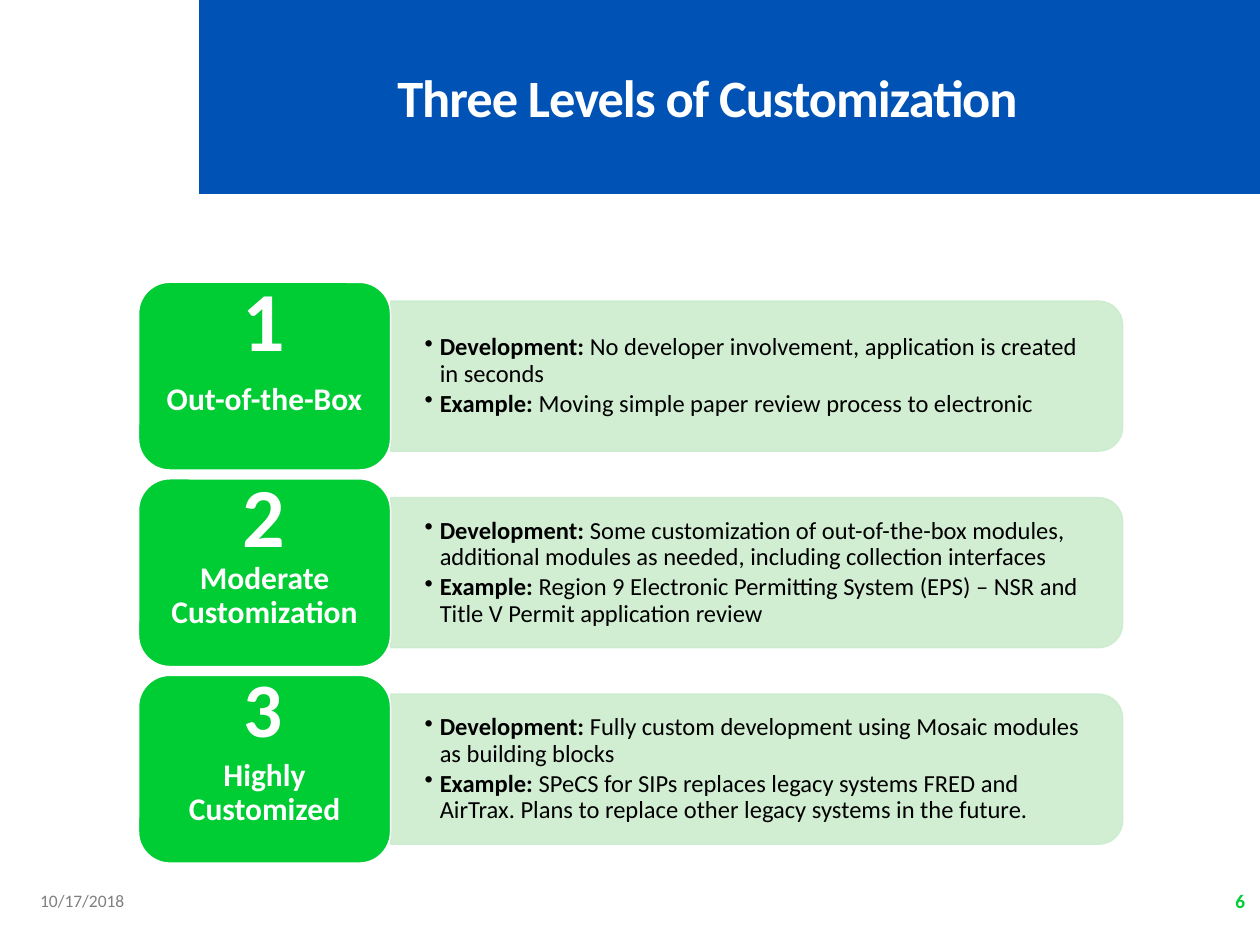
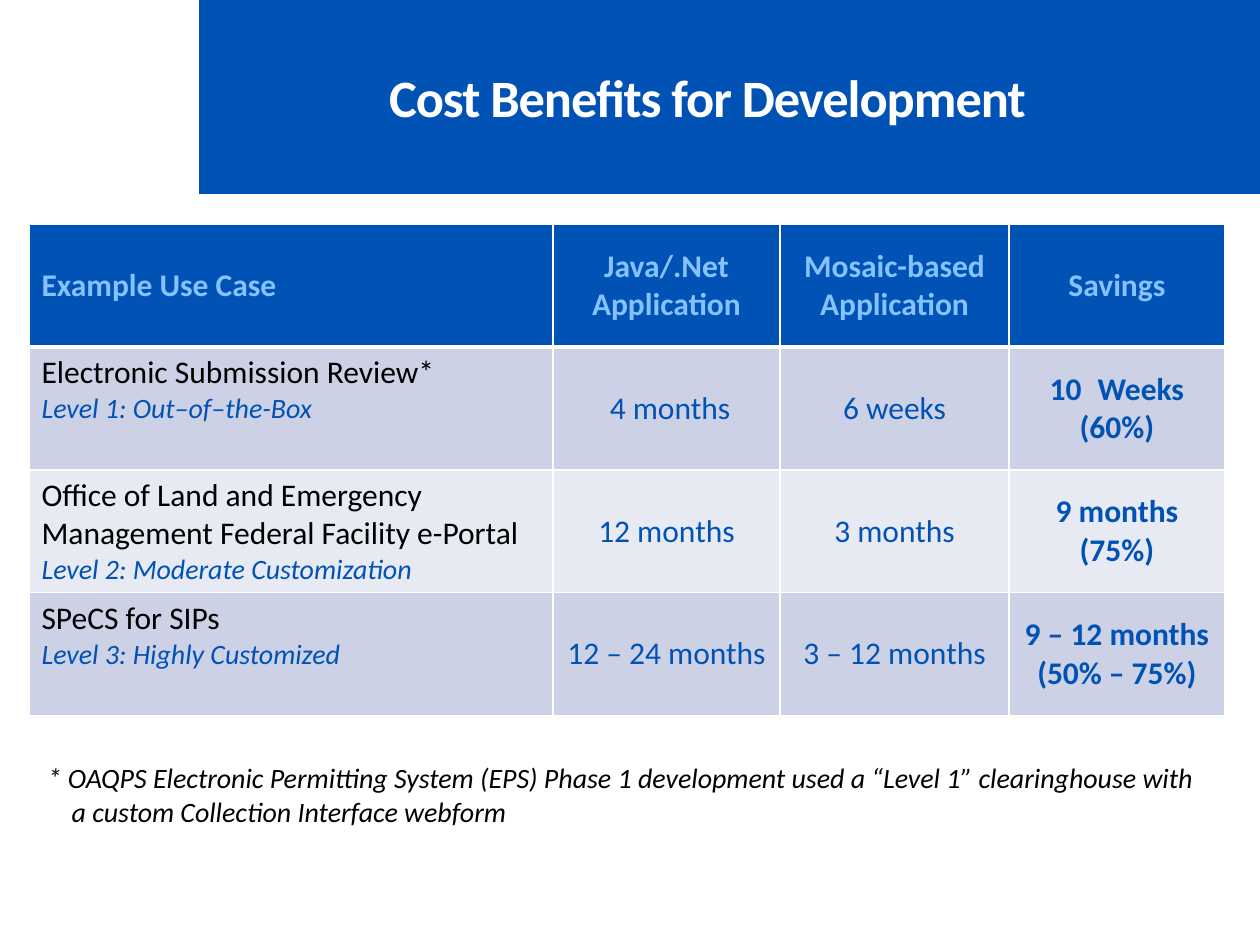
from dataclasses import dataclass
from math import cos, pi, sin
from typing import Any, NamedTuple

from lxml.etree import SubElement
from pptx import Presentation
from pptx.dml.color import RGBColor
from pptx.enum.shapes import MSO_SHAPE as SHAPE
from pptx.enum.text import MSO_ANCHOR as ANCHOR, PP_ALIGN as ALIGN
from pptx.oxml.ns import qn
from pptx.util import Pt

PX = 9144
FONT = "Calibri"
BLUE = RGBColor(0x00, 0x52, 0xB5)
GREEN = RGBColor(0x00, 0xCC, 0x33)
MINT = RGBColor(0xCC, 0xEC, 0xCE)
SKY = RGBColor(0x85, 0xC2, 0xFF)
BAND_DARK = RGBColor(0xCC, 0xD1, 0xE5)
BAND_LIGHT = RGBColor(0xE7, 0xE9, 0xF3)
GRAY = RGBColor(0x80, 0x80, 0x80)
BLACK = RGBColor(0, 0, 0)
WHITE = RGBColor(0xFF, 0xFF, 0xFF)

TITLE = {"size": Pt(30), "bold": True, "color": WHITE}
BADGE = {"size": Pt(18), "bold": True, "color": WHITE}
DATE = {"size": Pt(10), "color": GRAY}
PAGE = {"size": Pt(11), "bold": True, "color": GREEN}
DETAIL = {"size": Pt(14), "bold": False, "color": BLACK}
DETAIL_LABEL = {**DETAIL, "bold": True}
HEADER = {"size": Pt(18), "bold": True, "color": SKY}
USE_CASE = {"size": Pt(18), "bold": False, "color": BLACK}
LEVEL_NOTE = {"size": Pt(16), "bold": False, "italic": True, "color": BLUE}
DURATION = {"size": Pt(18), "bold": False, "color": BLUE}
SAVING = {"size": Pt(18), "bold": True, "color": BLUE}
FOOTNOTE = {"size": Pt(16), "italic": True, "color": BLACK}


class Box(NamedTuple):
    left: int
    top: int
    width: int
    height: int

    def emu(self) -> list[int]:
        return [v * PX for v in self]


@dataclass
class Level:
    number: str
    number_size: int
    name: str
    development: str
    example: str


@dataclass
class UseCase:
    name: str
    level: str
    java: str
    mosaic: str
    saving: str
    share: str
    saving_number: int = 0


LEVELS = [
    Level("1", 48, "Out-of-the-Box",
          "No developer involvement, application is created in seconds",
          "Moving simple paper review process to electronic"),
    Level("2", 48, "Moderate Customization",
          "Some customization of out-of-the-box modules, additional modules as needed, "
          "including collection interfaces",
          "Region 9 Electronic Permitting System (EPS) – NSR and Title V Permit application review"),
    Level("3", 44, "Highly Customized",
          "Fully custom development using Mosaic modules as building blocks",
          "SPeCS for SIPs replaces legacy systems FRED and AirTrax. "
          "Plans to replace other legacy systems in the future."),
]
HEADERS = [["Example Use Case"], ["Java/.Net", "Application"], ["Mosaic-based Application"], ["Savings"]]
USE_CASES = [
    UseCase("Electronic Submission Review*", "Level 1: Out–of–the-Box",
            " 4 months", "6 weeks", "Weeks", "(60%)", 10),
    UseCase("Office of Land and Emergency Management Federal Facility e-Portal",
            "Level 2: Moderate Customization", "12 months", "3 months", "9 months", "(75%)"),
    UseCase("SPeCS for SIPs", "Level 3: Highly Customized",
            "12 – 24 months", "3 – 12 months", "9 – 12 months", "(50% – 75%)"),
]
LEVEL_PITCH = 156
COLUMN_WIDTHS = [416, 180, 182, 171]


def add_run(p: Any, text: str, fmt: dict[str, Any]) -> Any:
    r = p.add_run()
    r.text = text
    r.font.name = FONT
    for key, value in fmt.items():
        if key == "color":
            r.font.color.rgb = value
        else:
            setattr(r.font, key, value)
    return r


def next_paragraph(tf: Any, align: Any = ALIGN.LEFT) -> Any:
    p = tf.paragraphs[0] if not tf.paragraphs[0].runs else tf.add_paragraph()
    p.alignment = align
    return p


def hang(p: Any, margin: int, indent: int) -> Any:
    pPr = p._p.get_or_add_pPr()
    pPr.set("marL", str(margin * PX))
    pPr.set("indent", str(-indent * PX))
    return pPr


def set_insets(tf: Any, left: int, top: int, right: int, bottom: int) -> None:
    insets = {"left": left, "top": top, "right": right, "bottom": bottom}
    for side, value in insets.items():
        setattr(tf, f"margin_{side}", value * PX)


def add_text(s: Any, box: Box, text: str, fmt: dict[str, Any], align: Any = ALIGN.LEFT,
             anchor: Any = ANCHOR.TOP, wrap: bool = True) -> Any:
    tf = s.shapes.add_textbox(*box.emu()).text_frame
    tf.word_wrap = wrap
    tf.vertical_anchor = anchor
    p = next_paragraph(tf, align)
    add_run(p, text, fmt)
    return p


def paint(sp: Any, fill: RGBColor, line: RGBColor | None = None) -> None:
    sp.shadow.inherit = False
    sp.fill.solid()
    sp.fill.fore_color.rgb = fill
    if line is None:
        sp.line.fill.background()
    else:
        sp.line.color.rgb = line
        sp.line.width = Pt(0.85)


def add_titled_slide(prs: Any, title: str) -> Any:
    s = prs.slides.add_slide(prs.slide_layouts[6])
    paint(s.shapes.add_shape(SHAPE.RECTANGLE, *Box(158, 0, 842, 154).emu()), BLUE)
    p = add_text(s, Box(171, 25, 781, 109), title, TITLE, ALIGN.CENTER, ANCHOR.MIDDLE)
    p.line_spacing = 0.9
    p.runs[0]._r.get_or_add_rPr().set("spc", "-60")
    return s


def add_panel(s: Any, box: Box, radius: int, steps: int = 8) -> Any:
    left, top, right, bottom = box.left, box.top, box.left + box.width, box.top + box.height
    outline = [(left, top)]
    for center_y, start in ((top + radius, -pi / 2), (bottom - radius, 0)):
        for i in range(steps + 1):
            angle = start + i * pi / 2 / steps
            outline.append((right - radius + radius * cos(angle), center_y + radius * sin(angle)))
    outline.append((left, bottom))
    points = [(round(x * PX), round(y * PX)) for x, y in outline]
    fb = s.shapes.build_freeform(*points[0])
    fb.add_line_segments(points[1:], close=True)
    sp = fb.convert_to_shape()
    paint(sp, MINT, MINT)
    for color in sp._element.spPr.iter(qn("a:srgbClr")):
        SubElement(color, qn("a:alpha")).set("val", "90000")
    return sp


def add_level(s: Any, level: Level, offset: int) -> None:
    tf = add_panel(s, Box(310, 239 + offset, 581, 119), 19).text_frame
    tf.word_wrap = True
    tf.vertical_anchor = ANCHOR.MIDDLE
    set_insets(tf, 27, 19, 33, 19)
    for label, text in (("Development: ", level.development), ("Example: ", level.example)):
        p = next_paragraph(tf)
        p.line_spacing = 0.9
        p.space_after = Pt(2)
        SubElement(hang(p, 12, 12), qn("a:buChar")).set("char", "•")
        add_run(p, label, DETAIL_LABEL)
        add_run(p, text, DETAIL)

    sp = s.shapes.add_shape(SHAPE.ROUNDED_RECTANGLE, *Box(110, 224 + offset, 200, 149).emu())
    paint(sp, GREEN, WHITE)
    tf = sp.text_frame
    tf.word_wrap = True
    tf.vertical_anchor = ANCHOR.MIDDLE
    set_insets(tf, 15, 49, 15, 11)
    p = next_paragraph(tf, ALIGN.CENTER)
    p.line_spacing = 0.9
    add_run(p, level.name, BADGE)

    add_text(s, Box(182, 207 + offset, 54, 91), level.number,
             {**BADGE, "size": Pt(level.number_size)}, ALIGN.CENTER, wrap=False)


def style_cell(cell: Any, fill: RGBColor, anchor: Any, top: int = 1, bottom: int = 1) -> Any:
    tcPr = cell._tc.get_or_add_tcPr()
    for side, width in {"L": 1, "R": 1, "T": top, "B": bottom}.items():
        ln = SubElement(tcPr, qn(f"a:ln{side}"), w=str(Pt(width)))
        SubElement(SubElement(ln, qn("a:solidFill")), qn("a:srgbClr")).set("val", str(WHITE))
    cell.fill.solid()
    cell.fill.fore_color.rgb = fill
    cell.vertical_anchor = anchor
    return cell.text_frame


def add_savings_table(s: Any, box: Box) -> None:
    rows = len(USE_CASES) + 1
    table = s.shapes.add_table(rows, len(HEADERS), *box.emu()).table
    for column, width in zip(table.columns, COLUMN_WIDTHS):
        column.width = width * PX
    for row in table.rows:
        row.height = box.height * PX // rows

    for c, lines in enumerate(HEADERS):
        tf = style_cell(table.cell(0, c), BLUE, ANCHOR.MIDDLE, bottom=3)
        for text in lines:
            add_run(next_paragraph(tf, ALIGN.CENTER if c else ALIGN.LEFT), text, HEADER)

    for r, case in enumerate(USE_CASES, 1):
        columns = [
            [(case.name, USE_CASE), (case.level, LEVEL_NOTE)],
            [(case.java, DURATION)],
            [(case.mosaic, DURATION)],
            [(case.saving, SAVING), (case.share, SAVING)],
        ]
        for c, lines in enumerate(columns):
            tf = style_cell(table.cell(r, c), BAND_DARK if r % 2 else BAND_LIGHT,
                            ANCHOR.MIDDLE if c else ANCHOR.TOP, top=3 if r == 1 else 1)
            for text, fmt in lines:
                add_run(next_paragraph(tf, ALIGN.CENTER if c else ALIGN.LEFT), text, fmt)
        if case.saving_number:
            pPr = hang(table.cell(r, 3).text_frame.paragraphs[0], 38, 38)
            SubElement(pPr, qn("a:buAutoNum"), type="arabicPlain", startAt=str(case.saving_number))


def build_levels(prs: Any) -> None:
    s = add_titled_slide(prs, "Three Levels of Customization")
    for i, level in enumerate(LEVELS):
        add_level(s, level, i * LEVEL_PITCH)
    add_text(s, Box(22, 695, 225, 40), "10/17/2018", DATE, anchor=ANCHOR.MIDDLE)
    add_text(s, Box(872, 695, 126, 40), "6", PAGE, ALIGN.RIGHT, ANCHOR.MIDDLE)


def build_costs(prs: Any) -> None:
    s = add_titled_slide(prs, "Cost Benefits for Development")
    add_savings_table(s, Box(23, 178, 949, 390))
    p = add_text(s, Box(22, 599, 951, 64),
                 "* OAQPS Electronic Permitting System (EPS) Phase 1 development used a “Level 1” "
                 "clearinghouse with a custom Collection Interface webform", FOOTNOTE)
    hang(p, 25, 19)


def main() -> None:
    prs = Presentation()
    prs.slide_width, prs.slide_height = 1000 * PX, 750 * PX
    build_levels(prs)
    build_costs(prs)
    prs.save("out.pptx")


if __name__ == "__main__":
    main()
